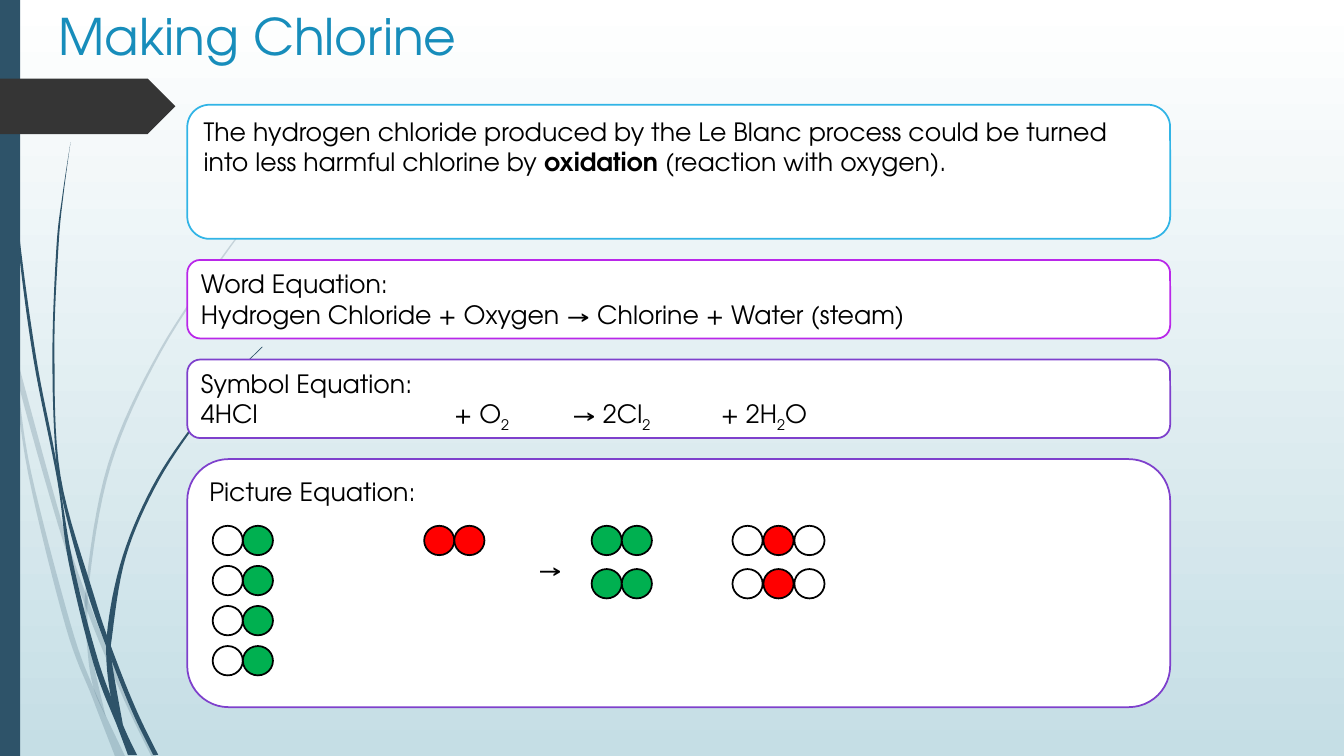
from lxml.etree import SubElement
from pptx import Presentation
from pptx.dml.color import RGBColor
from pptx.enum.shapes import MSO_SHAPE
from pptx.enum.text import MSO_ANCHOR, PP_ALIGN
from pptx.oxml.ns import qn
from pptx.util import Cm, Pt

FONT = "TeX Gyre Adventor"
WHITE = RGBColor(0xFF, 0xFF, 0xFF)
BLACK = RGBColor(0x00, 0x00, 0x00)
MIST = RGBColor(0xC5, 0xDE, 0xE5)
SLATE = RGBColor(0x2E, 0x53, 0x69)
CHARCOAL = RGBColor(0x35, 0x35, 0x35)
TITLE_BLUE = RGBColor(0x17, 0x8D, 0xBB)
SKY = RGBColor(0x31, 0xB4, 0xE6)
MAGENTA = RGBColor(0xB9, 0x27, 0xE9)
VIOLET = RGBColor(0x7E, 0x40, 0xCC)
GREEN = RGBColor(0x00, 0xB0, 0x50)
RED = RGBColor(0xFF, 0x00, 0x00)

HUNDREDTH = Cm(2.54) / 100
PALE_WISPS = [
    ([(0, 299), (11, 350), (28, 470), (65, 621), (92, 693), (114, 750)],
     [(0, 282), (9, 322), (17, 376), (31, 469), (70, 619), (93, 683), (124, 750)]),
    ([(14, 345), (17, 376), (58, 522), (88, 610), (123, 694), (150, 750)],
     [(14, 345), (62, 520), (92, 607), (127, 692), (155, 750)]),
    ([(312, 153), (268, 197), (228, 244), (158, 348), (107, 461), (85, 584),
      (87, 646), (93, 683), (105, 711)],
     [(312, 154), (268, 198), (229, 245), (160, 349), (110, 462), (88, 584),
      (91, 646), (105, 711)]),
]
DARK_WISPS = [
    ([(3, 0), (7, 110), (17, 233), (33, 355), (57, 477), (68, 557), (93, 659),
      (117, 722), (127, 749)],
     [(4, 0), (8, 109), (19, 232), (36, 355), (55, 453), (72, 556), (98, 657),
      (122, 719), (136, 749)]),
    ([(70, 141), (62, 193), (56, 245), (52, 349), (55, 449), (64, 505),
      (88, 592), (111, 656), (132, 708), (152, 749)],
     [(70, 141), (63, 193), (58, 245), (54, 349), (60, 472), (93, 590),
      (113, 649), (136, 706), (157, 749)]),
    ([(260, 344), (231, 373), (204, 405), (156, 474), (122, 551), (106, 631),
      (110, 691), (122, 719)],
     [(261, 344), (231, 374), (205, 406), (158, 476), (125, 552), (111, 633),
      (111, 656), (122, 719)]),
]


def write(para, text, size=18, color=BLACK, bold=False, subscript=False):
    """Add one formatted span of text to a paragraph."""
    span = para.add_run()
    span.text = text
    span.font.name = FONT
    span.font.size = Pt(size)
    span.font.color.rgb = color
    span.font.bold = bold
    if subscript:
        span.font._element.set("baseline", "-25000")


def add_block(page, kind, box, fill, line=None):
    """Add a flat preset shape in a box of centimetres."""
    shape = page.shapes.add_shape(kind, *map(Cm, box))
    paint(shape, fill, line)
    return shape


def paint(shape, fill, line=None):
    """Give a shape a plain fill, an optional outline and no shadow."""
    shape.shadow.inherit = False
    shape.fill.solid()
    shape.fill.fore_color.rgb = fill
    if line is None:
        shape.line.fill.background()
    else:
        shape.line.color.rgb = line
        shape.line.width = Pt(1.25)


def smooth(points, steps=8):
    """Return EMU points on a Catmull-Rom curve through the given points."""
    ends = [points[0], *points, points[-1]]
    curve = []
    for a, b, c, d in zip(ends, ends[1:], ends[2:], ends[3:]):
        for step in range(steps):
            t = step / steps
            curve.append(tuple(
                HUNDREDTH * (q + t * (r - p) / 2 + t**2 * (2*p - 5*q + 4*r - s) / 2
                             + t**3 * (3*q - p - 3*r + s) / 2)
                for p, q, r, s in zip(a, b, c, d)))
    return curve + [tuple(HUNDREDTH * value for value in points[-1])]


def add_wisp(page, left_edge, right_edge, opacity):
    """Draw one curved blade of grass between its two edges."""
    outline = smooth(left_edge) + smooth(right_edge)[::-1]
    builder = page.shapes.build_freeform(*outline[0], scale=1.0)
    builder.add_line_segments(outline[1:], close=True)
    wisp = builder.convert_to_shape()
    paint(wisp, SLATE)
    color = wisp._element.spPr.find(qn("a:solidFill"))[0]
    SubElement(color, qn("a:alpha"), val=str(opacity * 1000))


def add_backdrop(page, height):
    """Paint the gradient, the grass, the side bar and the marker."""
    fill = page.background.fill
    fill.gradient()
    fill.gradient_angle = 270
    for stop, color, position in zip(fill.gradient_stops, (WHITE, MIST), (0, 1)):
        stop.color.rgb = color
        stop.position = position
    for wisps, opacity in ((PALE_WISPS, 20), (DARK_WISPS, 100)):
        for left_edge, right_edge in wisps:
            add_wisp(page, left_edge, right_edge, opacity)
    add_block(page, MSO_SHAPE.RECTANGLE, (0, 0, 0.51, height), SLATE)
    add_block(page, MSO_SHAPE.PENTAGON, (0, 1.98, 4.42, 1.4), CHARCOAL)


def add_title(page, text, box):
    """Place and format the title placeholder."""
    title = page.shapes.title
    title.left, title.top, title.width, title.height = map(Cm, box)
    title.text_frame.vertical_anchor = MSO_ANCHOR.TOP
    para = title.text_frame.paragraphs[0]
    para.alignment = PP_ALIGN.LEFT
    write(para, text, size=36, color=TITLE_BLUE)


def add_panel(page, box, line, paragraphs, tabs=()):
    """Add a rounded panel; each paragraph lists spans of text and format."""
    panel = add_block(page, MSO_SHAPE.ROUNDED_RECTANGLE, box, WHITE, line)
    frame = panel.text_frame
    frame.word_wrap = True
    frame.vertical_anchor = MSO_ANCHOR.TOP
    for index, spans in enumerate(paragraphs):
        para = frame.add_paragraph() if index else frame.paragraphs[0]
        para.alignment = PP_ALIGN.LEFT
        if tabs:
            stops = SubElement(para._p.get_or_add_pPr(), qn("a:tabLst"))
            for tab in tabs:
                SubElement(stops, qn("a:tab"), pos=str(Cm(tab)), algn="l")
        for text, style in spans:
            write(para, text, **style)


def add_molecules(page, left, top, atoms, count, row_pitch, atom_pitch=0.76):
    """Stack equal molecules, each a row of touching atoms."""
    for row in range(count):
        for column, color in enumerate(atoms):
            box = (left + column * atom_pitch, top + row * row_pitch, 0.76, 0.74)
            add_block(page, MSO_SHAPE.OVAL, box, color, BLACK)


def add_picture_equation(page, box):
    """Show the reaction as coloured atoms inside a panel."""
    left, top = box[:2]
    add_panel(page, box, VIOLET, [[("Picture Equation:", {})]])
    row = top + 1.68
    add_molecules(page, left + 0.64, row, (WHITE, GREEN), 4, 1.01)
    add_molecules(page, left + 5.97, row, (RED, RED), 1, 1.01)
    add_molecules(page, left + 10.19, row, (GREEN, GREEN), 2, 1.09)
    add_molecules(page, left + 13.74, row, (WHITE, RED, WHITE), 2, 1.09, 0.78)
    arrow = page.shapes.add_textbox(Cm(left + 8.59), Cm(top + 2.26), Cm(1.14), Cm(1.02))
    arrow.text_frame.word_wrap = False
    write(arrow.text_frame.paragraphs[0], "→")


def main():
    """Build and save the slide."""
    deck = Presentation()
    deck.slide_width, deck.slide_height = Cm(33.87), Cm(19.05)
    page = deck.slides.add_slide(deck.slide_layouts[5])
    add_backdrop(page, 19.05)
    add_title(page, "Making Chlorine", (1.22, 0, 24.77, 3.56))

    heights, gap, top, boxes = (3.38, 1.98, 1.98, 6.25), 0.53, 2.64, []
    for height in heights:
        boxes.append((4.72, top, 24.77, height))
        top += height + gap
    sub = {"subscript": True}
    add_panel(page, boxes[0], SKY, [[
        ("The hydrogen chloride produced by the Le Blanc process could be turned "
         "into less harmful chlorine by ", {}),
        ("oxidation ", {"bold": True}),
        ("(reaction with oxygen).", {})]])
    add_panel(page, boxes[1], MAGENTA, [
        [("Word Equation:", {})],
        [("Hydrogen Chloride + Oxygen → Chlorine + Water (steam)", {})]])
    add_panel(page, boxes[2], VIOLET, [
        [("Symbol Equation:", {})],
        [("4HCl\t+ O", {}), ("2", sub), ("\t→ 2Cl", {}), ("2", sub),
         ("\t+ 2H", {}), ("2", sub), ("O", {})]], tabs=(6.38, 9.35, 13.1))
    add_picture_equation(page, boxes[3])
    deck.save("out.pptx")


if __name__ == "__main__":
    main()
